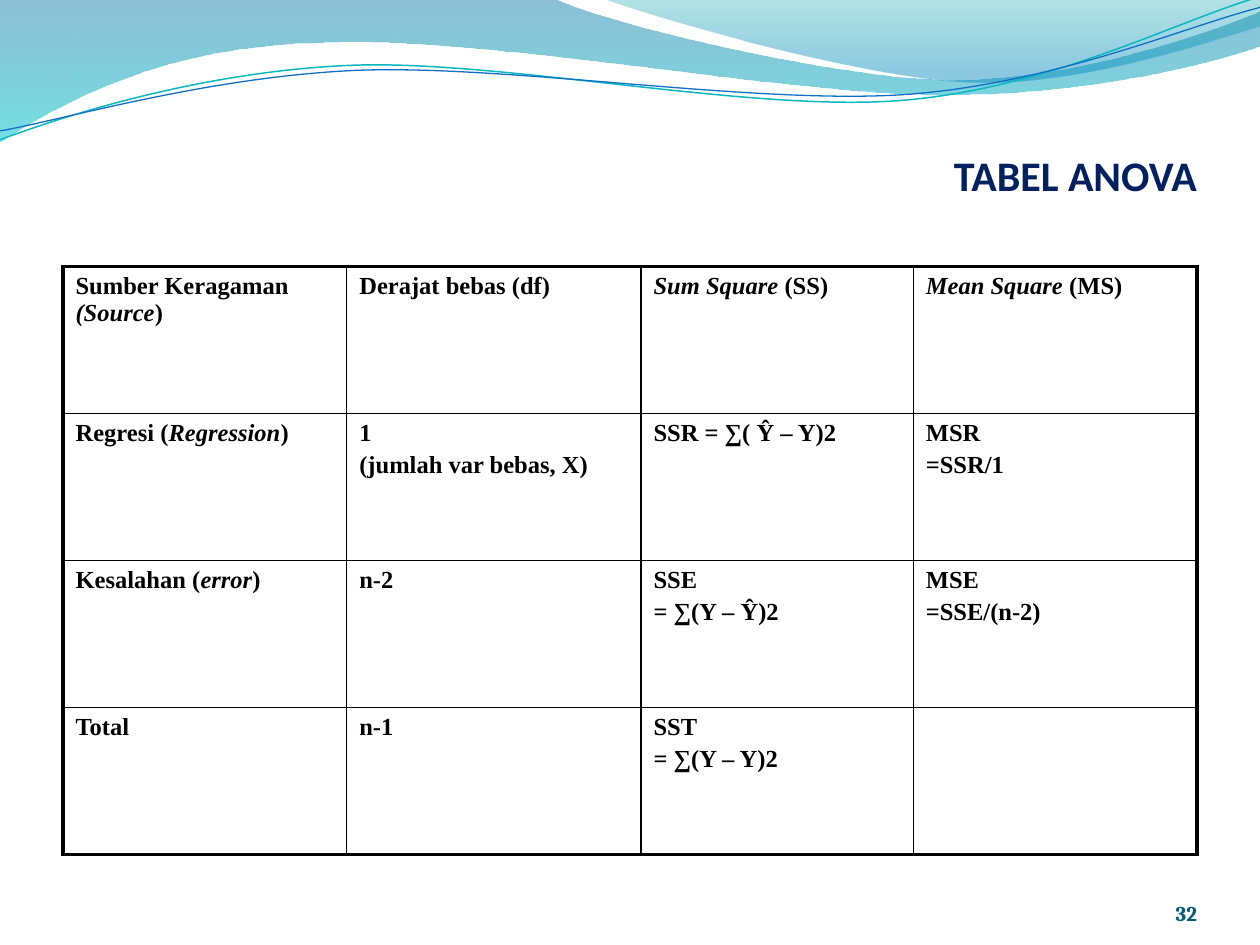
import math

from lxml import etree
from pptx import Presentation
from pptx.dml.color import RGBColor
from pptx.enum import text
from pptx.oxml import ns
from pptx.util import Cm, Pt

BLACK = RGBColor(0x00, 0x00, 0x00)
NAVY = RGBColor(0x00, 0x20, 0x60)
TEAL = RGBColor(0x04, 0x5D, 0x75)
CYAN_LINE = RGBColor(0x0A, 0xB8, 0xBF)
BLUE_LINE = RGBColor(0x0F, 0x6F, 0xC6)
DEEP_BLUE = RGBColor(0x00, 0x74, 0xA1)
AQUA = RGBColor(0x00, 0xC6, 0xCF)
SEA_GREEN = RGBColor(0x00, 0xA1, 0xA9)
SKY_BLUE = RGBColor(0x00, 0x8B, 0xBF)

WAVES = [
    {"box": (-0.03, -0.03, 25.45, 2.9),
     "segments": [(0, -0.03),
                  (11.18, -0.03),
                  (12.09, 0.43, 16.87, 1.6, 19.25, 1.6),
                  (21.67, 1.6, 24.33, 0.66, 25.4, 0.23),
                  (25.43, 0.91),
                  (24.97, 1.12, 22.1, 1.93, 18.95, 1.91),
                  (15.8, 1.91, 9.7, 0.71, 6.53, 0.86),
                  (3.28, 0.89, 1.17, 2.11, -0.03, 2.87),
                  (0, -0.03)],
     "stops": [(0, DEEP_BLUE, 45), (1, AQUA, 55)]},
    {"box": (12.17, -0.03, 13.23, 1.78),
     "segments": [(12.17, -0.03),
                  (12.93, 0.28, 17.32, 1.57, 19.53, 1.65),
                  (21.74, 1.75, 24.41, 0.81, 25.4, 0.53),
                  (25.4, 0),
                  (12.17, -0.03)],
     "stops": [(0, SEA_GREEN, 30), (0.8, SKY_BLUE, 45)]},
]
RIPPLES = [
    {"box": (-0.05, 0.56, 25.45, 1.8),
     "segments": [(0, 2.82),
                  (1.22, 2.36, 4.01, 1.45, 7.04, 1.32),
                  (10.03, 1.19, 15.06, 2.26, 18.11, 2.03),
                  (21.16, 1.8, 23.83, 0.38, 25.35, -0.05)],
     "color": CYAN_LINE, "width": 0.85},
    {"box": (-0.05, 0.76, 25.48, 1.47),
     "segments": [(0, 2.64),
                  (1.19, 2.44, 4.17, 1.55, 7.19, 1.42),
                  (10.24, 1.3, 15.16, 2.11, 18.21, 1.91),
                  (21.23, 1.7, 23.9, 0.53, 25.4, 0.15)],
     "color": BLUE_LINE, "width": 0.75},
]
RIPPLE_TILT = 2.7

ROWS = [
    ["Sumber Keragaman *(Source*)", "Derajat bebas (df)",
     "*Sum Square* (SS)", "*Mean Square* (MS)"],
    ["Regresi (*Regression*)", "1\n(jumlah var bebas, X)",
     "SSR = ∑( Ŷ – Y)2", "MSR\n=SSR/1"],
    ["Kesalahan (*error*)", "n-2", "SSE\n= ∑(Y – Ŷ)2", "MSE\n=SSE/(n-2)"],
    ["Total", "n-1", "SST\n= ∑(Y – Y)2", ""],
]
COLUMN_WIDTHS = [5.72, 5.93, 5.49, 5.72]
TABLE_HEIGHT = 11.86
OUTER_BORDER, INNER_BORDER = 2.25, 1

LABELS = [
    ("32", (22.02, 17.65, 2.11, 1.02), 0, "Cambria", 12, TEAL),
    ("TABEL ANOVA", (1.07, 0.85, 23.06, 3.18), 0.13, "Calibri", 24, NAVY),
]


def turn(point, center, degrees):
    cosine, sine = math.cos(math.radians(degrees)), math.sin(math.radians(degrees))
    x, y = point[0] - center[0], point[1] - center[1]
    return center[0] + cosine * x - sine * y, center[1] + sine * x + cosine * y


def add_outline(slide, box, segments, tilt=0):
    left, top, width, height = box
    center = left + width / 2, top + height / 2
    builder = slide.shapes.build_freeform(Cm(left), Cm(top))
    builder.add_line_segments([(Cm(left + width), Cm(top + height))], close=tilt == 0)
    shape = builder.convert_to_shape()
    shape.shadow.inherit = False
    shape.rotation = -tilt % 360
    outline = next(shape.element.iter(ns.qn("a:path")))
    for command in list(outline)[:2]:
        outline.remove(command)
    for index, segment in enumerate(segments):
        name = "moveTo" if index == 0 else "lnTo" if len(segment) == 2 else "cubicBezTo"
        command = etree.Element(ns.qn(f"a:{name}"))
        outline.insert(index, command)
        for point in zip(segment[::2], segment[1::2]):
            x, y = turn(point, center, tilt)
            etree.SubElement(command, ns.qn("a:pt"),
                             x=str(Cm(x - left)), y=str(Cm(y - top)))
    return shape


def add_wave(slide, wave):
    shape = add_outline(slide, wave["box"], wave["segments"])
    shape.line.fill.background()
    shape.fill.gradient()
    shape.fill.gradient_angle = 270
    for stop, (position, color, _) in zip(shape.fill.gradient_stops, wave["stops"]):
        stop.position = position
        stop.color.rgb = color
    for element, (_, _, opacity) in zip(shape.element.spPr.iter(ns.qn("a:srgbClr")),
                                        wave["stops"]):
        etree.SubElement(element, ns.qn("a:alpha"), val=str(opacity * 1000))


def add_ripple(slide, ripple):
    shape = add_outline(slide, ripple["box"], ripple["segments"], RIPPLE_TILT)
    shape.fill.background()
    shape.line.color.rgb = ripple["color"]
    shape.line.width = Pt(ripple["width"])


def format_run(run, font_name, size, color):
    run.font.name = font_name
    run.font.size = Pt(size)
    run.font.bold = True
    run.font.color.rgb = color


def fill_cell(cell, content):
    cell.text_frame.text = content.replace("*", "")
    for paragraph, line in zip(cell.text_frame.paragraphs, content.split("\n")):
        paragraph.text = ""
        paragraph.space_before = Pt(2.8)
        for index, part in enumerate(line.split("*")):
            if part:
                run = paragraph.add_run()
                run.text = part
                run.font.italic = index % 2 == 1
                format_run(run, "Times New Roman", 14, BLACK)


def add_borders(cell, outer_sides):
    properties = cell._tc.get_or_add_tcPr()
    for side, is_outer in outer_sides.items():
        width = Pt(OUTER_BORDER if is_outer else INNER_BORDER)
        border = etree.SubElement(properties, ns.qn(f"a:ln{side}"), w=str(width))
        fill = etree.SubElement(border, ns.qn("a:solidFill"))
        etree.SubElement(fill, ns.qn("a:srgbClr"), val=str(BLACK))


def add_anova_table(slide):
    last_row, last_column = len(ROWS) - 1, len(COLUMN_WIDTHS) - 1
    table = slide.shapes.add_table(
        len(ROWS), len(COLUMN_WIDTHS), Cm(1.27), Cm(5.37),
        Cm(sum(COLUMN_WIDTHS)), Cm(TABLE_HEIGHT)).table
    table.first_row = table.horz_banding = False
    for column, width in zip(table.columns, COLUMN_WIDTHS):
        column.width = Cm(width)
    for r, row in enumerate(ROWS):
        table.rows[r].height = Cm(TABLE_HEIGHT / len(ROWS))
        for c, content in enumerate(row):
            cell = table.cell(r, c)
            fill_cell(cell, content)
            add_borders(cell, {"L": c == 0, "R": c == last_column,
                               "T": r == 0, "B": r == last_row})
            cell.fill.background()


def add_label(slide, content, box, top_margin, font_name, size, color):
    frame = slide.shapes.add_textbox(*map(Cm, box)).text_frame
    frame.word_wrap = True
    frame.vertical_anchor = text.MSO_ANCHOR.BOTTOM
    frame.margin_left = frame.margin_right = frame.margin_bottom = 0
    frame.margin_top = Cm(top_margin)
    frame.text = content
    paragraph = frame.paragraphs[0]
    paragraph.alignment = text.PP_ALIGN.RIGHT
    format_run(paragraph.runs[0], font_name, size, color)


def main():
    presentation = Presentation()
    presentation.slide_width, presentation.slide_height = Cm(25.4), Cm(19.05)
    slide = presentation.slides.add_slide(presentation.slide_layouts[6])
    for wave in WAVES:
        add_wave(slide, wave)
    for ripple in RIPPLES:
        add_ripple(slide, ripple)
    add_anova_table(slide)
    for label in LABELS:
        add_label(slide, *label)
    presentation.save("out.pptx")


if __name__ == "__main__":
    main()
